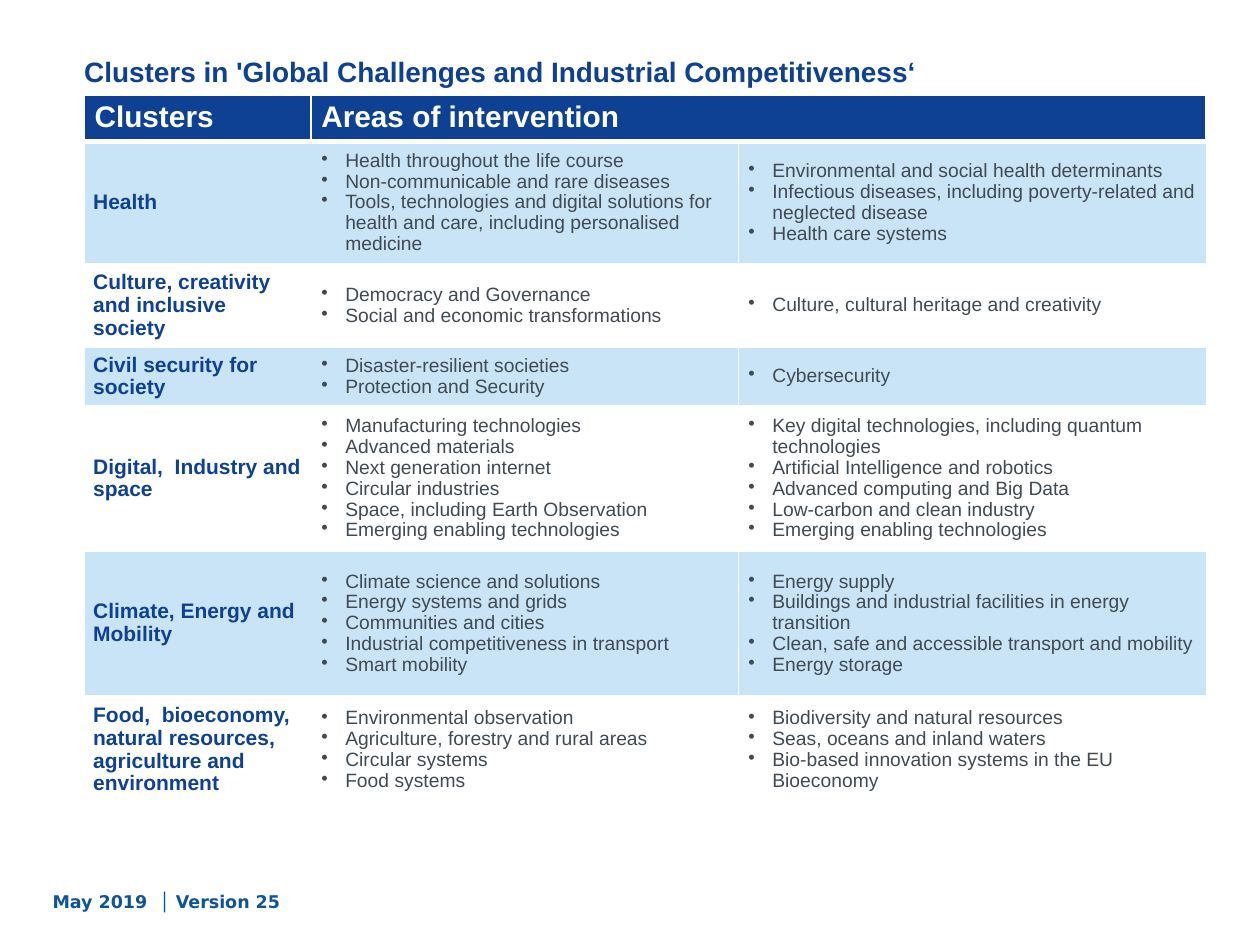
from lxml import etree
from pptx import Presentation, util as u
from pptx.dml.color import RGBColor
from pptx.enum import text as t
from pptx.oxml import ns

# The slide is a grid of 100 columns by 75 rows.
COLS, ROWS = 100, 75
UNIT = u.Inches(10) // COLS
INK = {"navy": "0E4194", "pale": "C9E3F7", "white": "FFFFFF",
       "grey": "404A52", "foot": "0F5494"}
PLAIN = "{2D5ABB26-0587-4C30-8999-92F81FD0307C}"  # no style, no grid
WIDTHS = (18, 33.9, 37.1)
HEAD = ("Clusters", "Areas of intervention")
HIGH = 3.6
# Row height, cluster, areas on the left, areas on the right
DATA = [
    (9.7, "Health",
     ["Health throughout the life course",
      "Non-communicable and rare diseases",
      "Tools, technologies and digital solutions for health and care, "
      "including personalised medicine"],
     ["Environmental and social health determinants",
      "Infectious diseases, including poverty-related and neglected disease",
      "Health care systems"]),
    (6.4, "Culture, creativity and inclusive society",
     ["Democracy and Governance", "Social and economic transformations"],
     ["Culture, cultural heritage and creativity"]),
    (4.4, "Civil security for society",
     ["Disaster-resilient societies", "Protection and Security"],
     ["Cybersecurity"]),
    (11.5, "Digital,  Industry and space",
     ["Manufacturing technologies", "Advanced materials",
      "Next generation internet", "Circular industries",
      "Space, including Earth Observation",
      "Emerging enabling technologies"],
     ["Key digital technologies, including quantum technologies",
      "Artificial Intelligence and robotics",
      "Advanced computing and Big Data", "Low-carbon and clean industry",
      "Emerging enabling technologies"]),
    (11.5, "Climate, Energy and Mobility",
     ["Climate science and solutions", "Energy systems and grids",
      "Communities and cities", "Industrial competitiveness in transport",
      "Smart mobility"],
     ["Energy supply",
      "Buildings and industrial facilities in energy transition",
      "Clean, safe and accessible transport and mobility",
      "Energy storage"]),
    (8.3, "Food,  bioeconomy, natural resources, agriculture and environment",
     ["Environmental observation", "Agriculture, forestry and rural areas",
      "Circular systems", "Food systems"],
     ["Biodiversity and natural resources", "Seas, oceans and inland waters",
      "Bio-based innovation systems in the EU Bioeconomy"]),
]


def span(count):
    return u.Emu(round(count * UNIT))


def tint(name):
    return RGBColor.from_string(INK[name])


def write(frame, lines, size, ink, bold=True, face="Arial", dots=False,
          pitch=None):
    """Put one paragraph per line into a text frame."""
    frame.word_wrap = True
    for i, line in enumerate(lines):
        para = frame.paragraphs[0] if i == 0 else frame.add_paragraph()
        if pitch:
            para.line_spacing = pitch
        if dots:
            props = para._p.get_or_add_pPr()
            props.set("marL", str(span(1.9)))
            props.set("indent", str(-span(1.9)))
            etree.SubElement(props, ns.qn("a:buChar")).set("char", "•")
        run = para.add_run()
        run.text = line
        font = run.font
        font.name, font.size, font.bold = face, u.Pt(size), bold
        font.color.rgb = tint(ink)


def label(slide, box, line, **form):
    shape = slide.shapes.add_textbox(*map(span, box))
    write(shape.text_frame, [line], **form)


def edge(cell, side, width):
    """Draw a white border on one side: L, R, T or B."""
    line = etree.SubElement(cell._tc.get_or_add_tcPr(),
                            ns.qn("a:ln" + side), w=str(u.Pt(width)))
    fill = etree.SubElement(line, ns.qn("a:solidFill"))
    etree.SubElement(fill, ns.qn("a:srgbClr"), val=INK["white"])


def style(cell, fill, edges, side=0.8, anchor=t.MSO_ANCHOR.MIDDLE):
    cell.margin_left = cell.margin_right = span(side)
    cell.margin_top = cell.margin_bottom = span(0.4)
    cell.vertical_anchor = anchor
    for name, width in edges.items():
        edge(cell, name, width)
    cell.fill.solid()
    cell.fill.fore_color.rgb = tint(fill)


def matrix(slide, left, top):
    highs = [HIGH] + [row[0] for row in DATA]
    box = (left, top, sum(WIDTHS), sum(highs))
    frame = slide.shapes.add_table(len(highs), len(WIDTHS), *map(span, box))
    table = frame.table
    table._tbl.tblPr.find(ns.qn("a:tableStyleId")).text = PLAIN
    table.horz_banding = False
    for col, wide in zip(table.columns, WIDTHS):
        col.width = span(wide)
    for row, high in zip(table.rows, highs):
        row.height = span(high)

    table.cell(0, 1).merge(table.cell(0, 2))
    for c in range(3):
        cell = table.cell(0, c)
        style(cell, "navy", {"L": 1, "R": 1, "T": 1, "B": 3},
              anchor=t.MSO_ANCHOR.TOP)
        if c < len(HEAD):
            write(cell.text_frame, [HEAD[c]], size=17, ink="white")

    for r, (_, name, *areas) in enumerate(DATA, 1):
        fill = "white" if r % 2 == 0 else "pale"
        rule = {"T": 3 if r == 1 else 1, "B": 1}
        cell = table.cell(r, 0)
        style(cell, fill, {"L": 1, **rule}, side=0.7)
        write(cell.text_frame, [name], size=12, ink="navy", pitch=0.97)
        for c, lines in enumerate(areas, 1):
            cell = table.cell(r, c)
            style(cell, fill, {"R" if c == 1 else "L": 1, **rule})
            write(cell.text_frame, lines, size=11, ink="grey", bold=False,
                  dots=True, pitch=0.97)


def main():
    deck = Presentation()
    deck.slide_width, deck.slide_height = span(COLS), span(ROWS)
    slide = deck.slides.add_slide(deck.slide_layouts[6])
    label(slide, (3.2, 70.2, 26.3, 2.7), "May 2019  │ Version 25",
          size=10, ink="foot", face="DejaVu Sans")
    label(slide, (5.7, 3.8, 93.3, 9.5),
          "Clusters in 'Global Challenges and Industrial Competitiveness‘",
          size=16, ink="navy")
    matrix(slide, 6.7, 7.6)
    deck.save("out.pptx")


if __name__ == "__main__":
    main()
